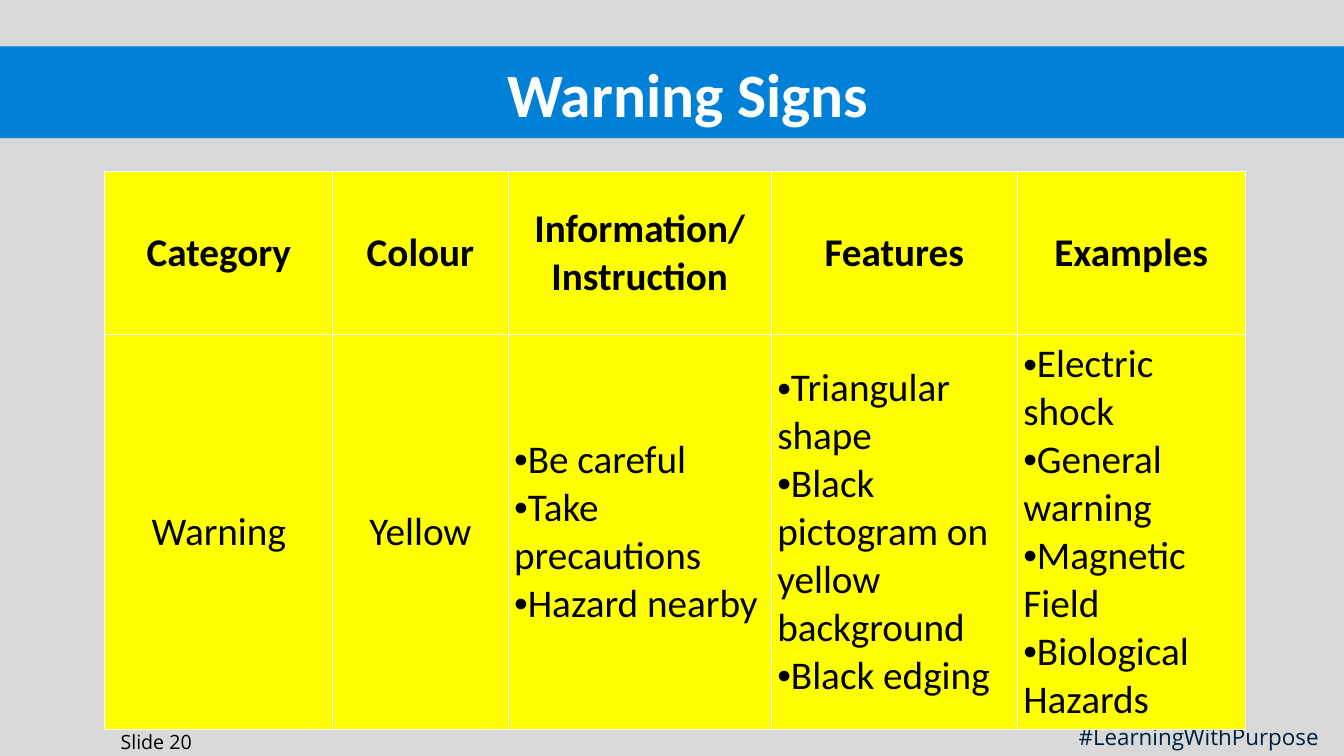
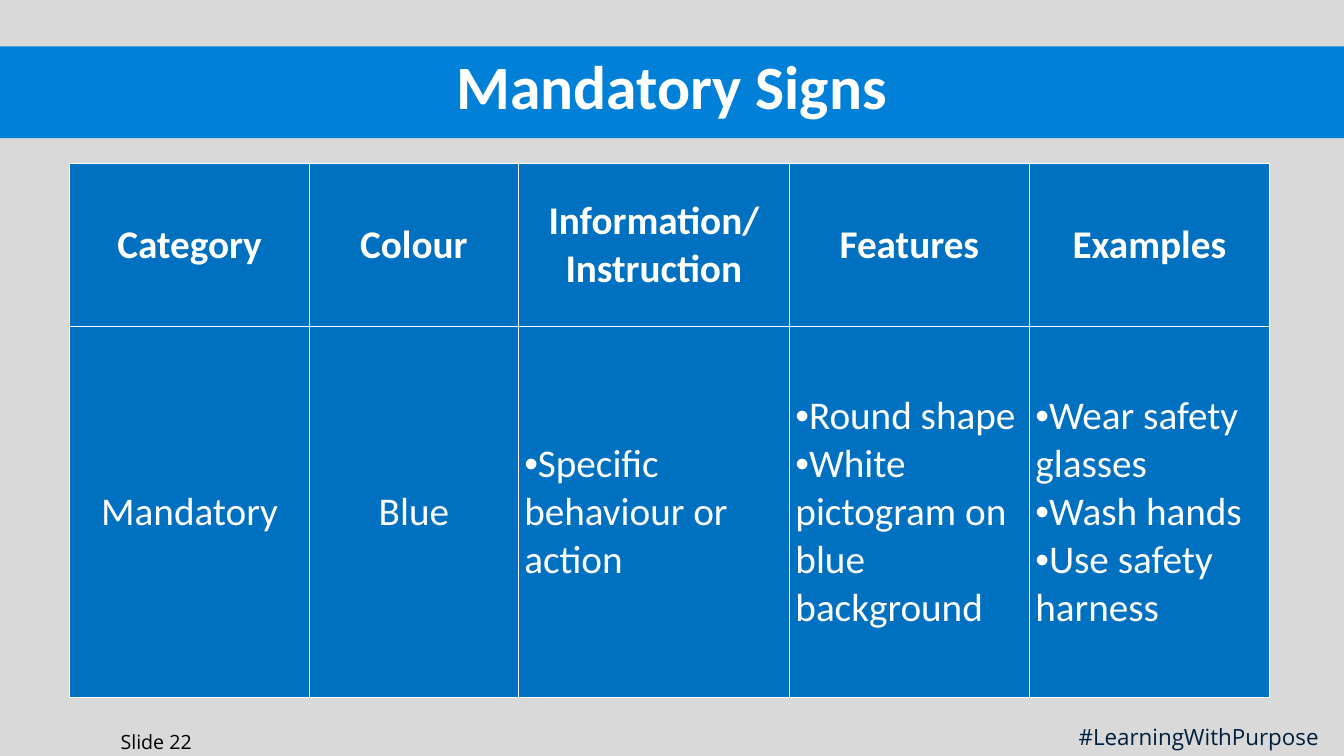
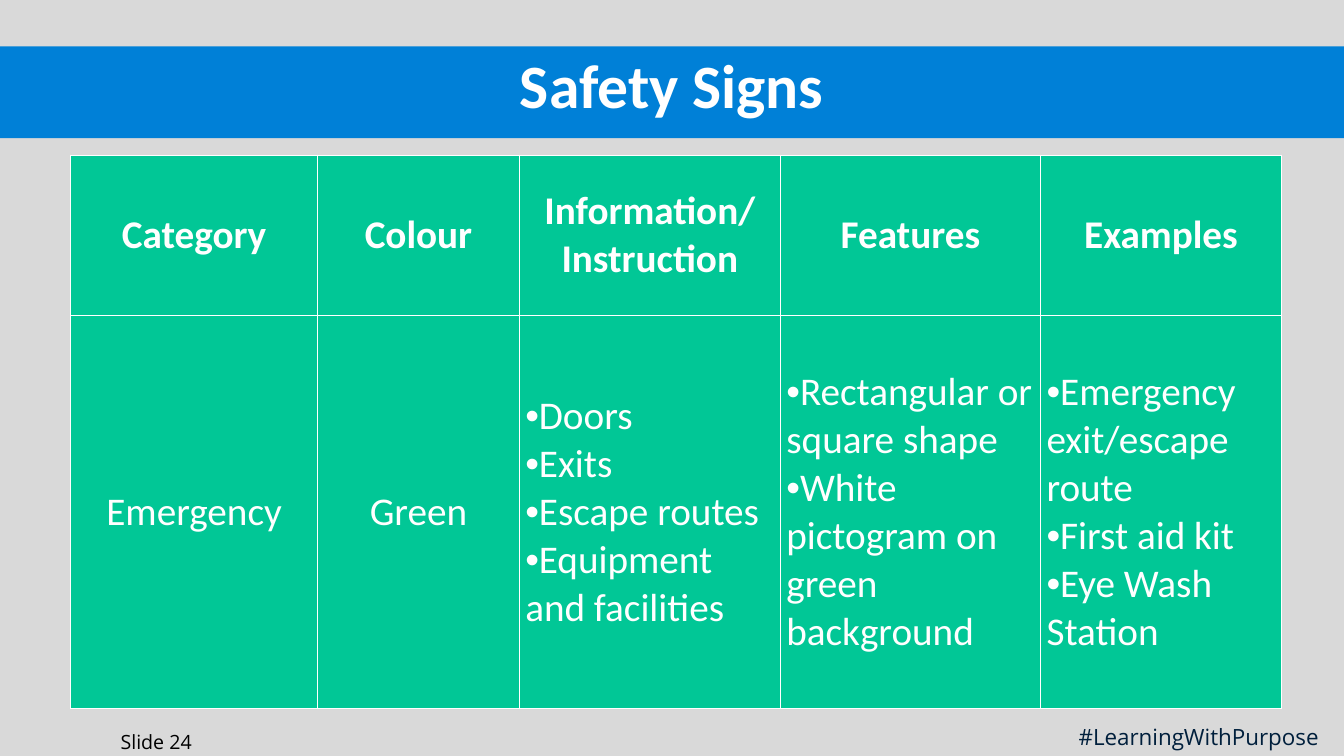
from lxml import etree
from pptx import Presentation
from pptx.dml.color import RGBColor
from pptx.enum.shapes import MSO_SHAPE
from pptx.enum.text import MSO_ANCHOR, PP_ALIGN
from pptx.oxml.ns import qn
from pptx.util import Inches, Pt

RECT = MSO_SHAPE.RECTANGLE
MIDDLE, TOP = MSO_ANCHOR.MIDDLE, MSO_ANCHOR.TOP
LEFT, CENTER = PP_ALIGN.LEFT, PP_ALIGN.CENTER

THEME = {
    "back": "D9D9D9", "band": "0080D7", "white": "FFFFFF", "black": "000000",
    "navy": "001F3C", "yellow": "FFFF00", "blue": "0070C0", "green": "01C796",
    "head_font": "Calibri", "foot_font": "Open Sans", "bullet_font": "Arial",
    "title": 44, "table": 28, "tag": 16, "number": 14,
    "border": 1, "inset": 0.06,
}
SLIDE_W, SLIDE_H = 13.33, 7.5
BAND = (0, 0.46, SLIDE_W, 0.91)
NUMBER_BOX = (1.08, 7.19, 0.94, 0.34)
TAG_BOX = (10.6, 7.13, 2.7, 0.37)
TAG = "#LearningWithPurpose"

# Content: each cell is a list of paragraphs
HEADER = [["Category"], ["Colour"], ["Information/", "Instruction"],
          ["Features"], ["Examples"]]
BULLET_FROM = 2  # first column whose body text is bulleted

SIGNS = [
    {"title": "Warning Signs", "title_box": (1.71, 0.56, 10.23, 0.73),
     "number": 20, "fill": "yellow", "ink": "black",
     "origin": (1.04, 1.7), "cols": [2.26, 1.74, 2.61, 2.44, 2.26],
     "rows": [1.62, 3.92],
     "body": [["Warning"], ["Yellow"],
              ["Be careful", "Take precautions", "Hazard nearby"],
              ["Triangular shape", "Black pictogram on yellow background",
               "Black edging"],
              ["Electric shock", "General warning", "Magnetic Field",
               "Biological Hazards"]]},
    {"title": "Mandatory Signs", "title_box": (1.71, 0.53, 9.91, 0.62),
     "number": 22, "fill": "blue", "ink": "white",
     "origin": (0.69, 1.62), "cols": [2.38, 2.07, 2.69, 2.38, 2.38],
     "rows": [1.62, 3.68],
     "body": [["Mandatory"], ["Blue"],
              ["Specific behaviour or action"],
              ["Round shape", "White pictogram on blue background"],
              ["Wear safety glasses", "Wash hands", "Use safety harness"]]},
    {"title": "Safety Signs", "title_box": (1.71, 0.52, 9.91, 0.62),
     "number": 24, "fill": "green", "ink": "white",
     "origin": (0.7, 1.54), "cols": [2.45, 2, 2.59, 2.58, 2.39],
     "rows": [1.59, 3.9],
     "body": [["Emergency"], ["Green"],
              ["Doors", "Exits", "Escape routes", "Equipment and facilities"],
              ["Rectangular or square shape",
               "White pictogram on green background"],
              ["Emergency exit/escape route", "First aid kit",
               "Eye Wash Station"]]},
]


def color(name):
    return RGBColor.from_string(THEME[name])


def style(p, font, size, ink, bold=False, align=LEFT):
    p.alignment = align
    for r in p.runs:
        r.font.name = THEME[font]
        r.font.size = Pt(THEME[size])
        r.font.bold = bold
        r.font.color.rgb = color(ink)


def add_text(s, box, text, font, size, ink, bold=False, align=LEFT, anchor=TOP):
    tf = s.shapes.add_textbox(*map(Inches, box)).text_frame
    tf.word_wrap = True
    tf.vertical_anchor = anchor
    tf.text = text
    style(tf.paragraphs[0], font, size, ink, bold, align)


def add_frame(s, sign):
    """Band, title and footer shared by all slides."""
    band = s.shapes.add_shape(RECT, *map(Inches, BAND))
    band.shadow.inherit = False
    band.fill.solid()
    band.fill.fore_color.rgb = color("band")
    band.line.fill.background()
    add_text(s, NUMBER_BOX, f"Slide {sign['number']}",
             "foot_font", "number", "black", align=CENTER)
    add_text(s, TAG_BOX, TAG, "foot_font", "tag", "navy")
    add_text(s, sign["title_box"], sign["title"], "head_font", "title",
             "white", True, CENTER, MIDDLE)


def add_borders(cell):
    tc_pr = cell._tc.get_or_add_tcPr()
    for side in ("a:lnL", "a:lnR", "a:lnT", "a:lnB"):
        ln = etree.SubElement(tc_pr, qn(side), w=str(Pt(THEME["border"])))
        fill = etree.SubElement(ln, qn("a:solidFill"))
        etree.SubElement(fill, qn("a:srgbClr"), val=THEME["white"])


def add_bullet(p):
    p_pr = p._p.get_or_add_pPr()
    p_pr.set("marL", "0")
    p_pr.set("indent", "0")
    etree.SubElement(p_pr, qn("a:buFont"), typeface=THEME["bullet_font"])
    etree.SubElement(p_pr, qn("a:buChar"), char="•")


def fill_cell(cell, lines, sign, is_header, bulleted):
    add_borders(cell)
    cell.fill.solid()
    cell.fill.fore_color.rgb = color(sign["fill"])
    cell.vertical_anchor = MIDDLE
    inset = Inches(THEME["inset"])
    cell.margin_left = cell.margin_right = inset
    cell.margin_top = cell.margin_bottom = inset
    cell.text_frame.text = "\n".join(lines)
    for p in cell.text_frame.paragraphs:
        if bulleted:
            add_bullet(p)
        style(p, "head_font", "table", sign["ink"], is_header,
              LEFT if bulleted else CENTER)


def add_sign_table(s, sign):
    cols, rows = sign["cols"], sign["rows"]
    box = (*sign["origin"], sum(cols), sum(rows))
    table = s.shapes.add_table(len(rows), len(cols), *map(Inches, box)).table
    table.horz_banding = False
    for col, width in zip(table.columns, cols):
        col.width = Inches(width)
    for row, height in zip(table.rows, rows):
        row.height = Inches(height)
    for i, cells in enumerate((HEADER, sign["body"])):
        for j, lines in enumerate(cells):
            fill_cell(table.cell(i, j), lines, sign, i == 0,
                      i > 0 and j >= BULLET_FROM)


def main():
    prs = Presentation()
    prs.slide_width, prs.slide_height = Inches(SLIDE_W), Inches(SLIDE_H)
    back = prs.slide_master.background.fill
    back.solid()
    back.fore_color.rgb = color("back")
    for sign in SIGNS:
        s = prs.slides.add_slide(prs.slide_layouts[6])
        add_frame(s, sign)
        add_sign_table(s, sign)
    prs.save("out.pptx")


if __name__ == "__main__":
    main()
